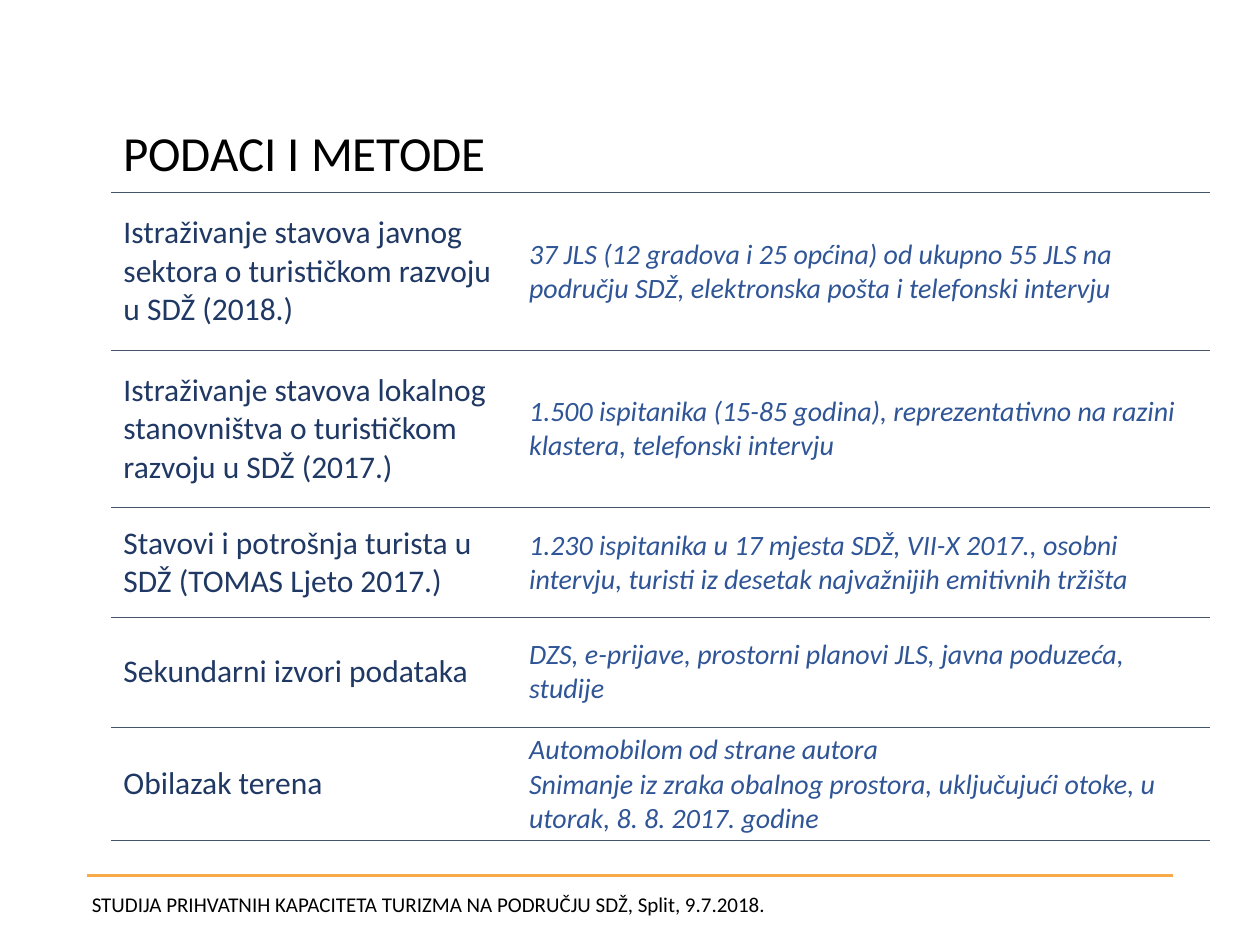
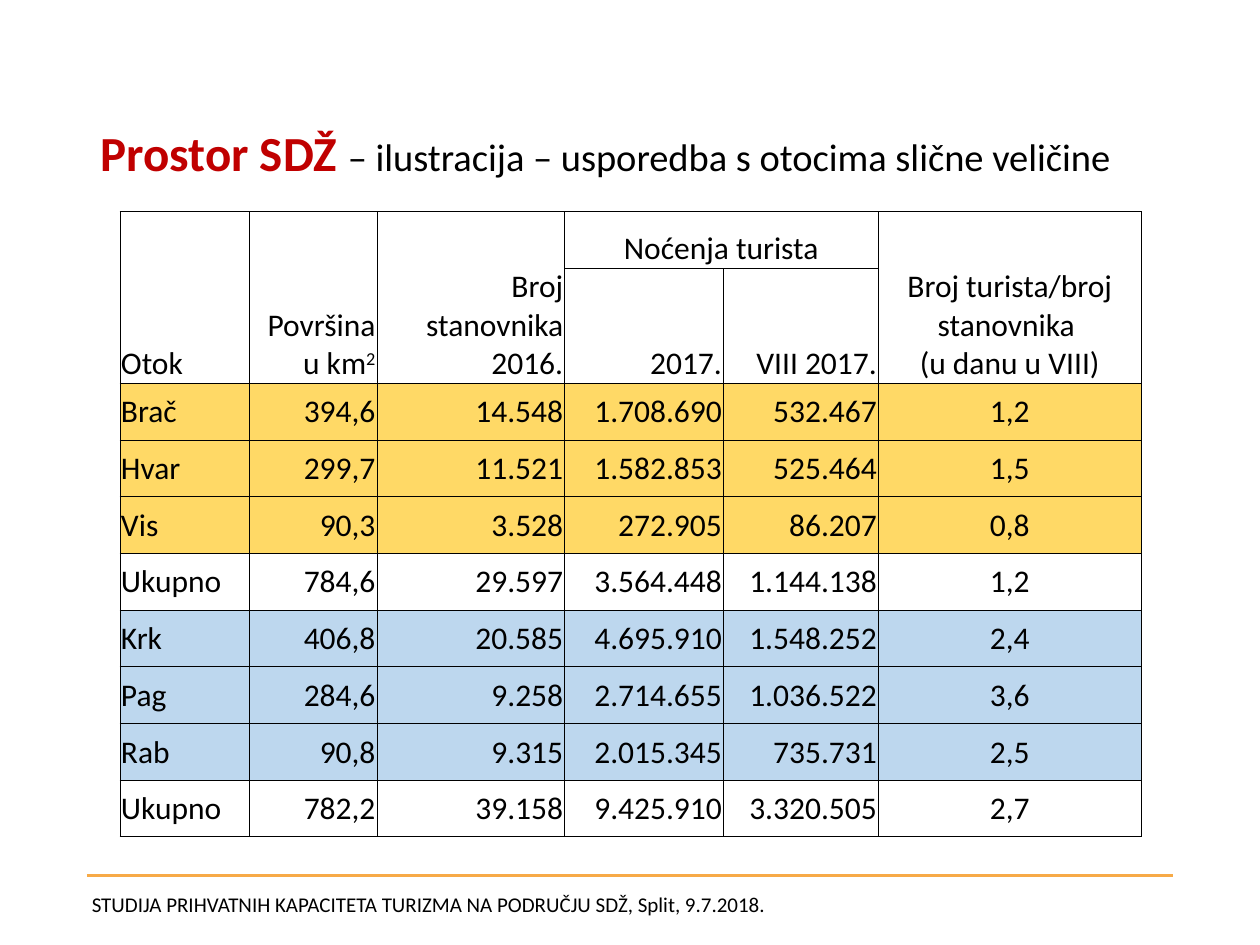
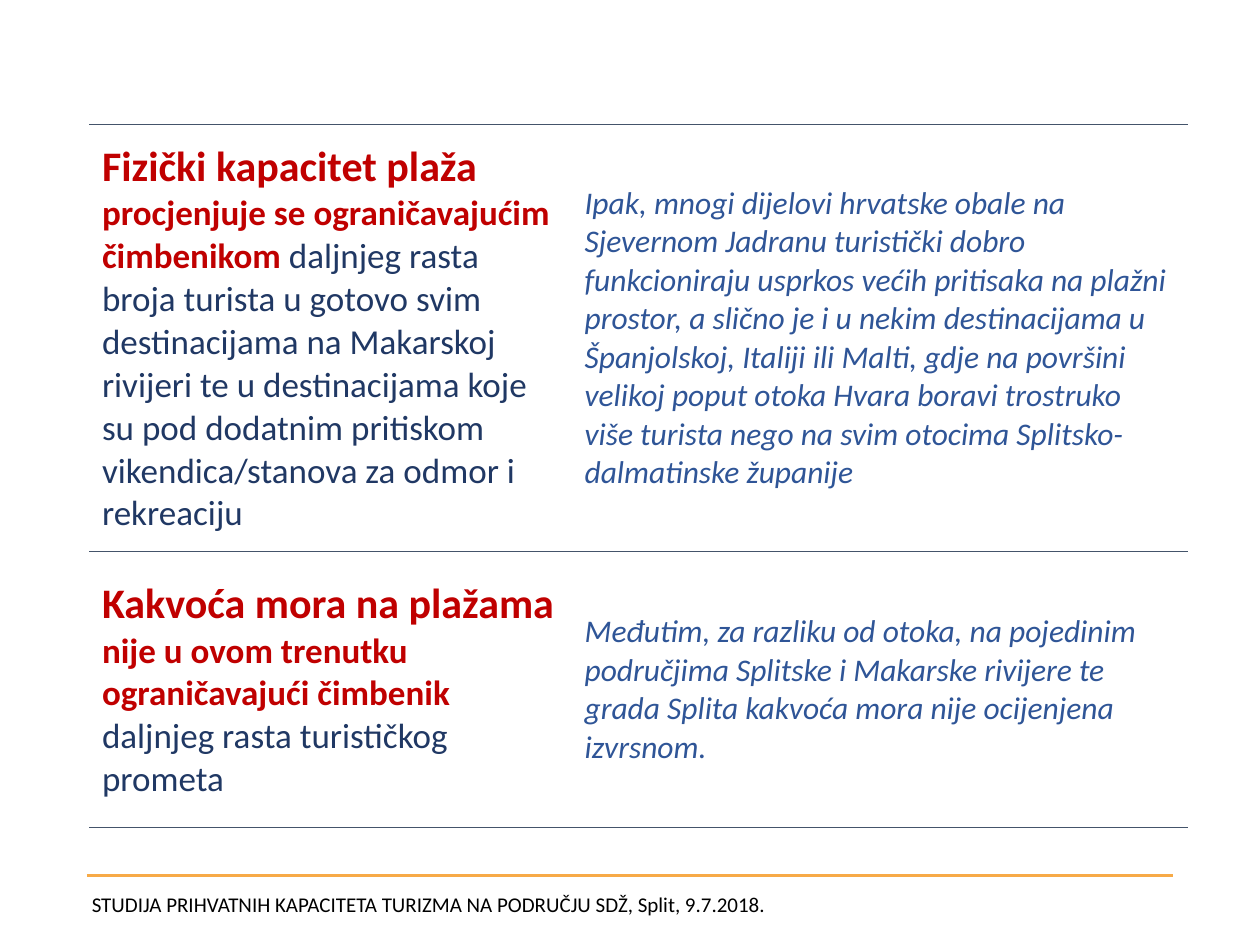
"""Builds three slides on the tourism carrying capacity study of the SDŽ area."""
from dataclasses import dataclass

from lxml.etree import SubElement
from pptx import Presentation
from pptx.dml.color import RGBColor as Rgb
from pptx.enum.shapes import MSO_CONNECTOR as Connector
from pptx.enum.text import MSO_ANCHOR as Anchor, PP_ALIGN as Align
from pptx.oxml.ns import qn
from pptx.util import Inches, Pt


@dataclass(frozen=True)
class Theme:
    font: str = "Calibri"
    black: str = "000000"
    red: str = "C00000"
    navy: str = "203864"
    blue: str = "2F5597"
    slate: str = "44546A"
    orange: str = "F7AA47"
    yellow: str = "FFD966"
    sky: str = "BDD7EE"
    title: int = 28
    heading: int = 24
    subtitle: int = 22
    lead: int = 20
    body: int = 18
    detail: int = 16
    footer: int = 12


THEME = Theme()
TITLE = {"size": THEME.title, "color": THEME.black}
TITLE_RED = {"size": THEME.title, "color": THEME.red, "bold": True}
SUBTITLE = {"size": THEME.subtitle, "color": THEME.black}
FOOTER = {"size": THEME.footer, "color": THEME.black}
TOPIC = {"size": THEME.body, "color": THEME.navy}
DETAIL = {"size": THEME.detail, "color": THEME.blue, "italic": True}
HEADING = {"size": THEME.heading, "color": THEME.red, "bold": True}
LEAD = {"size": THEME.lead, "color": THEME.red, "bold": True}
FINDING = {"size": THEME.lead, "color": THEME.navy}
REMARK = {"size": THEME.body, "color": THEME.blue, "italic": True}
FIGURE = {"size": THEME.body, "color": THEME.black}
POWER = {**FIGURE, "baseline": 30000}


def write(frame, paragraphs, align=Align.LEFT, line_spacing=None):
    frame.word_wrap = True
    for index, runs in enumerate(paragraphs):
        paragraph = frame.add_paragraph() if index else frame.paragraphs[0]
        paragraph.alignment = align
        paragraph.line_spacing = line_spacing
        for text, style in runs:
            run = paragraph.add_run()
            run.text = text
            values = {"name": THEME.font, "bold": False, "italic": False, **style}
            values["size"] = Pt(values["size"])
            run.font.color.rgb = Rgb.from_string(values.pop("color"))
            if "baseline" in values:
                run.font._element.set("baseline", str(values.pop("baseline")))
            for name, value in values.items():
                setattr(run.font, name, value)


def tabulate(slide, left, top, widths, heights, rows, aligns, edges, line, fills=None, margins=None):
    table = slide.shapes.add_table(
        len(heights), len(widths), Inches(left), Inches(top),
        Inches(sum(widths)), Inches(sum(heights))).table
    table.first_row = table.horz_banding = False
    for column, width in zip(table.columns, widths):
        column.width = Inches(width)
    for r, (row, height) in enumerate(zip(rows, heights)):
        table.rows[r].height = Inches(height)
        for c, paragraphs in enumerate(row):
            cell = table.cell(r, c)
            cell.vertical_anchor = Anchor.MIDDLE
            for name, value in (margins or {}).items():
                setattr(cell, name, Inches(value))
            color, points = line
            for side in "LRTB":
                edge = SubElement(cell._tc.get_or_add_tcPr(), qn(f"a:ln{side}"), w=str(Pt(points)))
                if side in edges:
                    SubElement(SubElement(edge, qn("a:solidFill")), qn("a:srgbClr"), val=color)
                else:
                    SubElement(edge, qn("a:noFill"))
            if fills and fills[r]:
                cell.fill.solid()
                cell.fill.fore_color.rgb = Rgb.from_string(fills[r])
            else:
                cell.fill.background()
            if paragraphs:
                write(cell.text_frame, paragraphs, aligns[c])
    return table


deck = Presentation()
deck.slide_width, deck.slide_height = Inches(10), Inches(7.5)
methods, islands, beaches = [deck.slides.add_slide(deck.slide_layouts[6]) for _ in range(3)]

for slide in deck.slides:
    rule = slide.shapes.add_connector(
        Connector.STRAIGHT, Inches(0.69), Inches(6.95), Inches(9.31), Inches(6.95))
    rule.line.color.rgb = Rgb.from_string(THEME.orange)
    rule.line.width = Pt(2)
    SubElement(rule._element.spPr, qn("a:effectLst"))
    footer = slide.shapes.add_textbox(Inches(0.63), Inches(7.03), Inches(8.68), Inches(0.3))
    write(footer.text_frame, [[
        ("STUDIJA PRIHVATNIH KAPACITETA TURIZMA NA PODRUČJU SDŽ, Split, 9.7.2018.", FOOTER)]])

titles = [
    (methods, 0.88, [("PODACI I METODE", TITLE)]),
    (islands, 0.7, [("Prostor SDŽ ", TITLE_RED),
                    ("– ilustracija – usporedba s otocima slične veličine", SUBTITLE)]),
]
for slide, left, runs in titles:
    title = slide.shapes.add_textbox(Inches(left), Inches(0.87), Inches(8.62), Inches(0.73))
    title.text_frame.vertical_anchor = Anchor.MIDDLE
    write(title.text_frame, [runs], line_spacing=0.9)

sources = [
    ("Istraživanje stavova javnog sektora o turističkom razvoju u SDŽ (2018.)",
     ["37 JLS (12 gradova i 25 općina) od ukupno 55 JLS na području SDŽ, "
      "elektronska pošta i telefonski intervju"]),
    ("Istraživanje stavova lokalnog stanovništva o turističkom razvoju u SDŽ (2017.)",
     ["1.500 ispitanika (15-85 godina), reprezentativno na razini klastera, telefonski intervju"]),
    ("Stavovi i potrošnja turista u SDŽ (TOMAS Ljeto 2017.)",
     ["1.230 ispitanika u 17 mjesta SDŽ, VII-X 2017., osobni intervju, "
      "turisti iz desetak najvažnijih emitivnih tržišta"]),
    ("Sekundarni izvori podataka",
     ["DZS, e-prijave, prostorni planovi JLS, javna poduzeća, studije"]),
    ("Obilazak terena",
     ["Automobilom od strane autora",
      "Snimanje iz zraka obalnog prostora, uključujući otoke, u utorak, 8. 8. 2017. godine"]),
]
source_rows = [([[(topic, TOPIC)]], [[(text, DETAIL)] for text in details])
               for topic, details in sources]
tabulate(methods, 0.88, 1.53, [3.22, 5.5], [1.25] * 2 + [0.87] * 3, source_rows,
         [Align.LEFT] * 2, "TB", (THEME.slate, 0.5))

header_rows = [
    [[[("Otok", FIGURE)]],
     [[("Površina u km", FIGURE), ("2", POWER)]],
     [[("Broj stanovnika", FIGURE)], [("2016.", FIGURE)]],
     [[("Noćenja turista", FIGURE)]],
     None,
     [[("Broj turista/broj stanovnika ", FIGURE)], [("(u danu u VIII)", FIGURE)]]],
    [None, None, None, [[("2017.", FIGURE)]], [[("VIII 2017.", FIGURE)]], None],
]
island_figures = [
    ("Brač", "394,6", "14.548", "1.708.690", "532.467", "1,2"),
    ("Hvar", "299,7", "11.521", "1.582.853", "525.464", "1,5"),
    ("Vis", "90,3", "3.528", "272.905", "86.207", "0,8"),
    ("Ukupno", "784,6", "29.597", "3.564.448", "1.144.138", "1,2"),
    ("Krk", "406,8", "20.585", "4.695.910", "1.548.252", "2,4"),
    ("Pag", "284,6", "9.258", "2.714.655", "1.036.522", "3,6"),
    ("Rab", "90,8", "9.315", "2.015.345", "735.731", "2,5"),
    ("Ukupno", "782,2", "39.158", "9.425.910", "3.320.505", "2,7"),
]
island_rows = header_rows + [[[[(text, FIGURE)]] for text in row] for row in island_figures]
comparison = tabulate(
    islands, 0.95, 1.68, [1.03, 1.01, 1.49, 1.26, 1.23, 2.09], [0.45, 0.46] + [0.45] * 8,
    island_rows, [Align.LEFT] + [Align.RIGHT] * 4 + [Align.CENTER], "LRTB", (THEME.black, 0.25),
    fills=[None] * 2 + [THEME.yellow] * 3 + [None] + [THEME.sky] * 3 + [None],
    margins={"margin_left": 0.01, "margin_right": 0.01, "margin_top": 0.01, "margin_bottom": 0})
for r in range(2):
    for c in range(6):
        comparison.cell(r, c).vertical_anchor = Anchor.BOTTOM
for c in (0, 1, 2, 5):
    comparison.cell(0, c).merge(comparison.cell(1, c))
nights = comparison.cell(0, 3)
nights.merge(comparison.cell(0, 4))
nights.text_frame.paragraphs[0].alignment = Align.CENTER

findings = [
    ("Fizički kapacitet plaža ", "procjenjuje se ograničavajućim čimbenikom",
     " daljnjeg rasta broja turista u gotovo svim destinacijama na Makarskoj rivijeri te u "
     "destinacijama koje su pod dodatnim pritiskom vikendica/stanova za odmor i rekreaciju",
     "Ipak, mnogi dijelovi hrvatske obale na Sjevernom Jadranu turistički dobro funkcioniraju "
     "usprkos većih pritisaka na plažni prostor, a slično je i u nekim destinacijama u "
     "Španjolskoj, Italiji ili Malti, gdje na površini velikoj poput otoka Hvara boravi "
     "trostruko više turista nego na svim otocima Splitsko-dalmatinske županije"),
    ("Kakvoća mora na plažama ", "nije u ovom trenutku ograničavajući čimbenik ",
     "daljnjeg rasta turističkog prometa",
     "Međutim, za razliku od otoka, na pojedinim područjima Splitske i Makarske rivijere te "
     "grada Splita kakvoća mora nije ocijenjena izvrsnom."),
]
finding_rows = [([[(heading, HEADING), (lead, LEAD), (finding, FINDING)]], [[(remark, REMARK)]])
                for heading, lead, finding, remark in findings]
tabulate(beaches, 0.71, 0.99, [3.83, 4.89], [3.39, 2.19], finding_rows,
         [Align.LEFT] * 2, "TB", (THEME.slate, 0.5))

deck.save("out.pptx")
